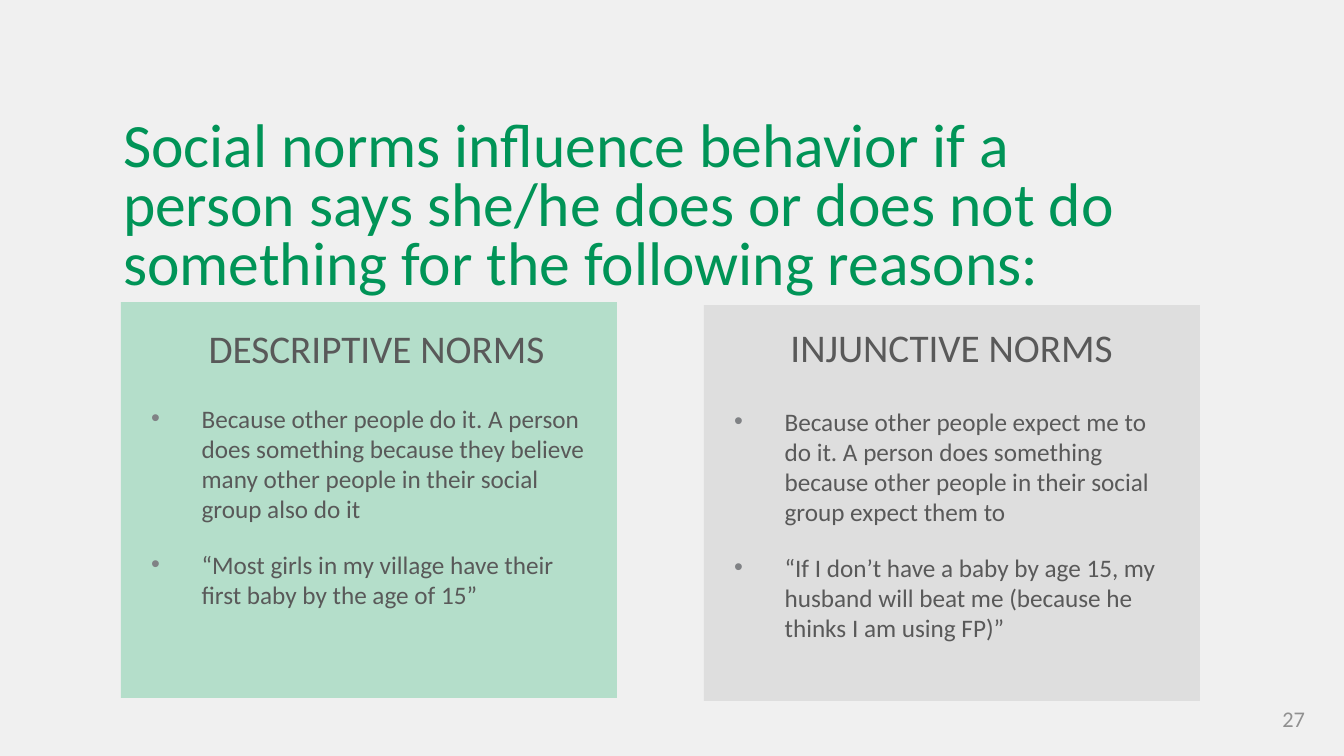
from lxml.etree import SubElement
from pptx import Presentation
from pptx.dml.color import RGBColor
from pptx.enum.shapes import MSO_SHAPE
from pptx.enum.text import MSO_ANCHOR, PP_ALIGN
from pptx.oxml.ns import qn
from pptx.util import Emu, Inches, Pt

COLORS = {
    "background": "F0F0F0",
    "title": "009457",
    "descriptive": "2BB673",
    "injunctive": "DEDEDE",
    "text": "595959",
    "bullet": "808285",
    "number": "909090",
}
FONT = "Calibri"
EMU_PER_PX = 914400 / 100.8

TITLE = ("Social norms influence behavior if a person says she/he does or does not do "
         "something for the following reasons:")
NORMS = [
    {
        "box": (121, 302, 496, 396),
        "heading": "DESCRIPTIVE NORMS",
        "heading_offset": (75, 26),
        "color": "descriptive",
        "opacity": 30,
        "reasons": [
            "Because other people do it. A person does something because they believe "
            "many other people in their social group also do it",
            "“Most girls in my village have their first baby by the age of 15”",
        ],
    },
    {
        "box": (704, 305, 496, 396),
        "heading": "INJUNCTIVE NORMS",
        "heading_offset": (67, 22),
        "color": "injunctive",
        "opacity": 100,
        "reasons": [
            "Because other people expect me to do it. A person does something because "
            "other people in their social group expect them to",
            "“If I don’t have a baby by age 15, my husband will beat me "
            "(because he thinks I am using FP)”",
        ],
    },
]


def px(length):
    """Turn a length in px into EMU."""
    return Emu(round(length * EMU_PER_PX))


def rgb(name):
    """Look up a named color."""
    return RGBColor.from_string(COLORS[name])


def apply(target, formats):
    """Set each format value on the target."""
    for name, value in formats.items():
        setattr(target, name, value)


def write(paragraph, text, size, color, **formats):
    """Fill a paragraph with one styled run."""
    apply(paragraph, formats)
    run = paragraph.add_run()
    run.text = text
    apply(run.font, {"name": FONT, "size": Pt(size)})
    run.font.color.rgb = rgb(color)


def add_line(slide, box, text, size, color, frame_formats, **formats):
    """Place a text box holding one paragraph."""
    frame = slide.shapes.add_textbox(*map(px, box)).text_frame
    apply(frame, {"word_wrap": True, **frame_formats})
    write(frame.paragraphs[0], text, size, color, **formats)


def add_bullet(paragraph):
    """Give a paragraph a hanging bullet."""
    properties = paragraph._p.get_or_add_pPr()
    properties.set("marL", str(Inches(0.5)))
    properties.set("indent", str(-Inches(0.5)))
    bullet_color = SubElement(properties, qn("a:buClr"))
    SubElement(bullet_color, qn("a:srgbClr"), val=COLORS["bullet"])
    SubElement(properties, qn("a:buFont"), typeface="Arial")
    SubElement(properties, qn("a:buChar"), char="•")


def add_norm_card(slide, box, heading, heading_offset, color, opacity, reasons):
    """Place a colored card with its heading and bulleted reasons."""
    card = slide.shapes.add_shape(MSO_SHAPE.RECTANGLE, *map(px, box))
    card.shadow.inherit = False
    card.line.fill.background()
    card.fill.solid()
    card.fill.fore_color.rgb = rgb(color)
    if opacity < 100:
        fill_color = card.fill._xPr.find(qn("a:solidFill"))[0]
        SubElement(fill_color, qn("a:alpha"), val=str(opacity * 1000))

    frame = card.text_frame
    apply(frame, {
        "word_wrap": True,
        "vertical_anchor": MSO_ANCHOR.TOP,
        "margin_left": Inches(0.3),
        "margin_right": Inches(0.3),
        "margin_top": Inches(1),
        "margin_bottom": Inches(0.05),
    })
    for index, reason in enumerate(reasons):
        paragraph = frame.add_paragraph() if index else frame.paragraphs[0]
        write(paragraph, reason, 18, "text", alignment=PP_ALIGN.LEFT,
              space_before=Pt(6), space_after=Pt(12))
        add_bullet(paragraph)

    left, top = box[:2]
    heading_box = (left + heading_offset[0], top + heading_offset[1], 361, 50)
    add_line(slide, heading_box, heading, 28, "text", {},
             alignment=PP_ALIGN.CENTER, line_spacing=0.8, space_before=Pt(10))


def add_title(slide, box):
    """Place the slide title."""
    margins = {"margin_left": Inches(0.05), "margin_right": Inches(0.05)}
    add_line(slide, box, TITLE, 44, "title", margins, line_spacing=0.8)


def add_slide_number(slide, box):
    """Place the slide number."""
    add_line(slide, box, "27", 16, "number",
             {"vertical_anchor": MSO_ANCHOR.MIDDLE}, alignment=PP_ALIGN.RIGHT)


def main():
    """Build the slide and save it."""
    deck = Presentation()
    apply(deck, {"slide_width": px(1344), "slide_height": px(756)})
    slide = deck.slides.add_slide(deck.slide_layouts[6])
    slide.background.fill.solid()
    slide.background.fill.fore_color.rgb = rgb("background")

    add_title(slide, (118, 115, 1082, 120))
    for norm in NORMS:
        add_norm_card(slide, **norm)
    add_slide_number(slide, (1013, 699, 302, 40))
    deck.save("out.pptx")


if __name__ == "__main__":
    main()
